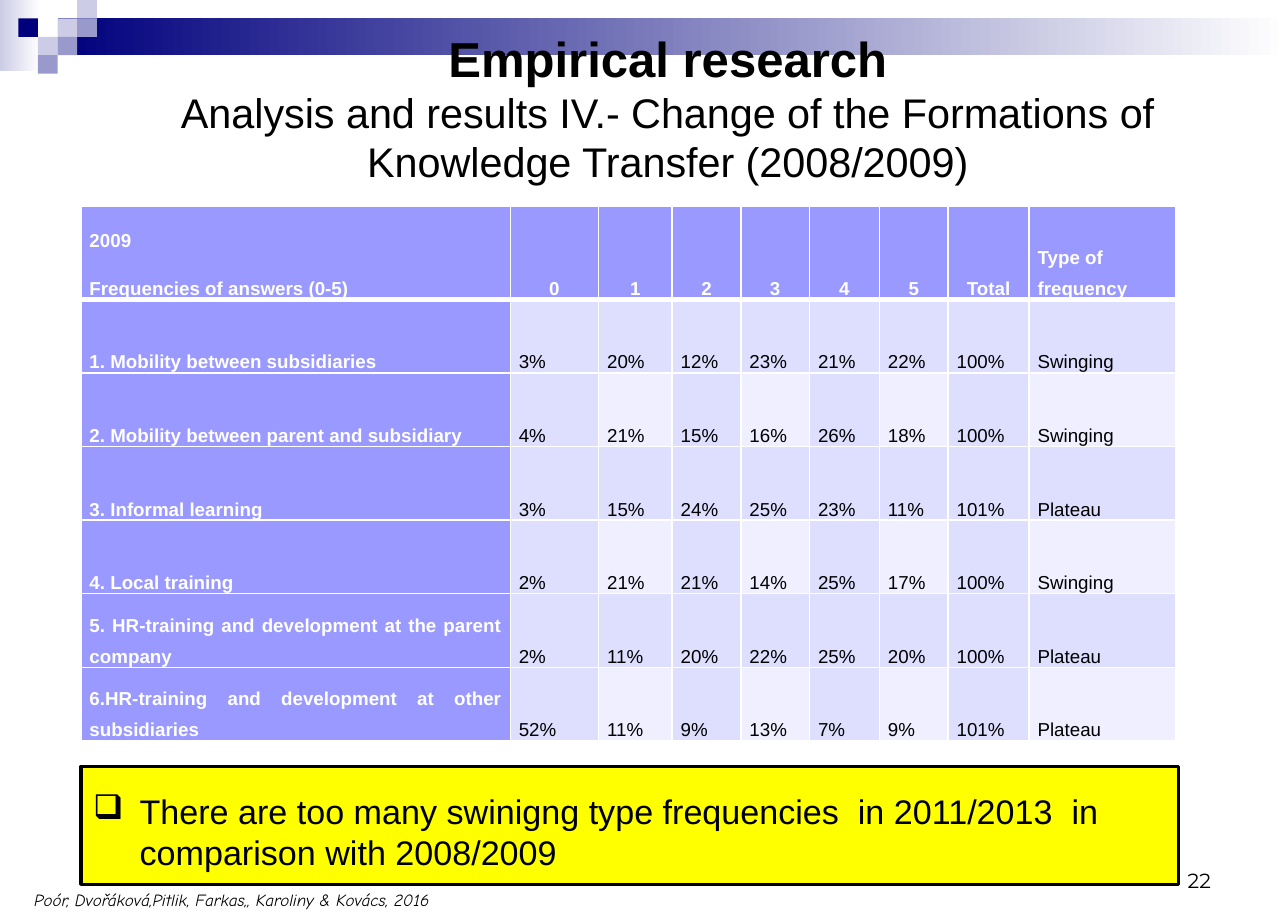
import dataclasses

import lxml.etree
import pptx
import pptx.dml.color
import pptx.enum.shapes
import pptx.enum.text
import pptx.oxml.ns
import pptx.util

PX = 9144  # EMU; 100 px to the inch
ALIGN = pptx.enum.text.PP_ALIGN
ANCHOR = pptx.enum.text.MSO_ANCHOR


@dataclasses.dataclass(frozen=True)
class Theme:
    navy: str = "00007D"
    mauve: str = "9999CC"
    pale: str = "CCCCE6"
    header: str = "9999FF"
    band: str = "DEDEFF"
    light_band: str = "EFEFFF"
    yellow: str = "FFFF00"
    black: str = "000000"
    white: str = "FFFFFF"
    font: str = "Arial"
    credit_font: str = "Comic Neue"
    number_font: str = "Montserrat"
    title_size: float = 28.8
    subtitle_size: float = 24.3
    callout_size: int = 20
    table_size: int = 11
    credit_size: int = 10
    number_size: int = 12


THEME = Theme()

# column, row, colour of each small square in the corner
SQUARES = [
    (2, 1, THEME.pale), (3, 0, THEME.pale), (3, 1, THEME.mauve), (1, 2, THEME.pale),
    (0, 1, THEME.navy), (2, 2, THEME.mauve), (1, 3, THEME.mauve),
]
COLUMN_WIDTHS = [350, 72, 60, 56, 56, 57, 56, 66, 120]
HEADER_HEIGHT, ROW_HEIGHT = 76, 60
ROWS = [
    ["2009\nFrequencies of answers (0-5)", "0", "1", "2", "3", "4", "5", "Total", "Type of frequency"],
    ["1. Mobility between subsidiaries", "3%", "20%", "12%", "23%", "21%", "22%", "100%", "Swinging"],
    ["2. Mobility between parent and subsidiary", "4%", "21%", "15%", "16%", "26%", "18%", "100%", "Swinging"],
    ["3. Informal learning", "3%", "15%", "24%", "25%", "23%", "11%", "101%", "Plateau"],
    ["4. Local training", "2%", "21%", "21%", "14%", "25%", "17%", "100%", "Swinging"],
    ["5. HR-training and development at the parent company",
     "2%", "11%", "20%", "22%", "25%", "20%", "100%", "Plateau"],
    ["6.HR-training and development at other subsidiaries",
     "52%", "11%", "9%", "13%", "7%", "9%", "101%", "Plateau"],
]


def rgb(colour):
    return pptx.dml.color.RGBColor.from_string(colour)


def px(*lengths):
    return [length * PX for length in lengths]


def add_span(para, text, size, font=THEME.font, colour=THEME.black, bold=False, italic=False):
    span = para.add_run()
    span.text = text
    span.font.size = pptx.util.Pt(size)
    span.font.name = font
    span.font.bold = bold
    span.font.italic = italic
    span.font.color.rgb = rgb(colour)


def add_rectangle(page, at, fill, fade_to=None, line=None):
    """Add a flat rectangle, or one fading to the right into fade_to."""
    box = page.shapes.add_shape(pptx.enum.shapes.MSO_SHAPE.RECTANGLE, *px(*at))
    box.shadow.inherit = False
    if fade_to:
        box.fill.gradient()
        box.fill.gradient_angle = 0
        for stop, colour in zip(box.fill.gradient_stops, (fill, fade_to)):
            stop.color.rgb = rgb(colour)
    else:
        box.fill.solid()
        box.fill.fore_color.rgb = rgb(fill)
    if line:
        box.line.color.rgb = rgb(line)
        box.line.width = pptx.util.Pt(2)
    else:
        box.line.fill.background()
    return box


def add_text_box(page, at, align, anchor):
    """Add a wrapping text box and return its frame."""
    frame = page.shapes.add_textbox(*px(*at)).text_frame
    frame.word_wrap = True
    frame.vertical_anchor = anchor
    frame.paragraphs[0].alignment = align
    return frame


def add_corner_pattern(page):
    add_rectangle(page, (0, 0, 33, 58), THEME.pale, THEME.white)
    add_rectangle(page, (47, 15, 1003, 30), THEME.navy, THEME.white)
    for column, row, colour in SQUARES:
        add_rectangle(page, (15 + 16 * column, 15 * row, 16, 15), colour)


def add_title(page):
    frame = add_text_box(page, (52, 18, 985, 134), ALIGN.CENTER, ANCHOR.TOP)
    add_span(frame.paragraphs[0], "Empirical research", THEME.title_size, bold=True)
    para = frame.add_paragraph()
    para.alignment = ALIGN.CENTER
    add_span(para, "Analysis and results IV.- Change of the Formations of Knowledge Transfer (2008/2009)",
             THEME.subtitle_size)


def set_borders(cell, widths):
    """Draw white borders; widths maps a side (L, R, T, B) to points."""
    properties = cell._tc.get_or_add_tcPr()
    qn = pptx.oxml.ns.qn
    for side, width in widths.items():
        line = lxml.etree.SubElement(properties, qn(f"a:ln{side}"), w=str(pptx.util.Pt(width)))
        fill = lxml.etree.SubElement(line, qn("a:solidFill"))
        lxml.etree.SubElement(fill, qn("a:srgbClr"), val=THEME.white)


def cell_fill(row, column):
    if row == 0 or column == 0:
        return THEME.header
    return THEME.light_band if row % 2 == 0 and column % 2 == 0 else THEME.band


def cell_align(row, column):
    if row > 0 or column == 0:
        return ALIGN.JUSTIFY
    return ALIGN.LEFT if column == len(COLUMN_WIDTHS) - 1 else ALIGN.CENTER


def fill_cell(cell, text, row, column):
    heading = row == 0 or column == 0
    set_borders(cell, {"L": 1, "R": 1, "T": 3 if row == 1 else 1, "B": 3 if row == 0 else 1})
    cell.fill.solid()
    cell.fill.fore_color.rgb = rgb(cell_fill(row, column))
    cell.vertical_anchor = ANCHOR.BOTTOM
    cell.margin_left = cell.margin_right = 7 * PX
    cell.margin_top = cell.margin_bottom = 0
    for index, line in enumerate(text.split("\n")):
        para = cell.text_frame.add_paragraph() if index else cell.text_frame.paragraphs[0]
        para.alignment = cell_align(row, column)
        para.line_spacing = 1.5
        para.space_after = pptx.util.Pt(10)
        add_span(para, line, THEME.table_size, bold=heading,
                 colour=THEME.white if heading else THEME.black)


def add_frequency_table(page):
    height = HEADER_HEIGHT + ROW_HEIGHT * (len(ROWS) - 1)
    table = page.shapes.add_table(len(ROWS), len(COLUMN_WIDTHS),
                                  *px(66, 168, sum(COLUMN_WIDTHS), height)).table
    for column, width in enumerate(COLUMN_WIDTHS):
        table.columns[column].width = width * PX
    for row, texts in enumerate(ROWS):
        table.rows[row].height = (ROW_HEIGHT if row else HEADER_HEIGHT) * PX
        for column, text in enumerate(texts):
            fill_cell(table.cell(row, column), text, row, column)


def add_bullet(para, mark, indent):
    properties = para._p.get_or_add_pPr()
    properties.set("marL", str(indent * PX))
    properties.set("indent", str(-indent * PX))
    lxml.etree.SubElement(properties, pptx.oxml.ns.qn("a:buChar"), char=mark)


def add_callout(page):
    frame = add_rectangle(page, (66, 625, 895, 96), THEME.yellow, line=THEME.black).text_frame
    frame.word_wrap = True
    frame.vertical_anchor = ANCHOR.MIDDLE
    frame.margin_top = 15 * PX
    para = frame.paragraphs[0]
    para.alignment = ALIGN.LEFT
    add_bullet(para, "❑", 38)
    add_span(para, "There are too many swinigng type frequencies  in 2011/2013  in comparison with 2008/2009",
             THEME.callout_size)


def add_footer(page):
    credit = add_text_box(page, (18, 720, 525, 27), ALIGN.LEFT, ANCHOR.TOP)
    add_span(credit.paragraphs[0], "Poór, Dvořáková,Pitlik, Farkas,, Karoliny & Kovács, 2016",
             THEME.credit_size, THEME.credit_font, italic=True)
    number = add_text_box(page, (752, 683, 245, 50), ALIGN.RIGHT, ANCHOR.BOTTOM)
    add_span(number.paragraphs[0], "22", THEME.number_size, THEME.number_font)


def main():
    deck = pptx.Presentation()
    deck.slide_width, deck.slide_height = px(1050, 750)
    page = deck.slides.add_slide(deck.slide_layouts[6])
    add_corner_pattern(page)
    add_title(page)
    add_frequency_table(page)
    add_callout(page)
    add_footer(page)
    deck.save("out.pptx")


if __name__ == "__main__":
    main()
